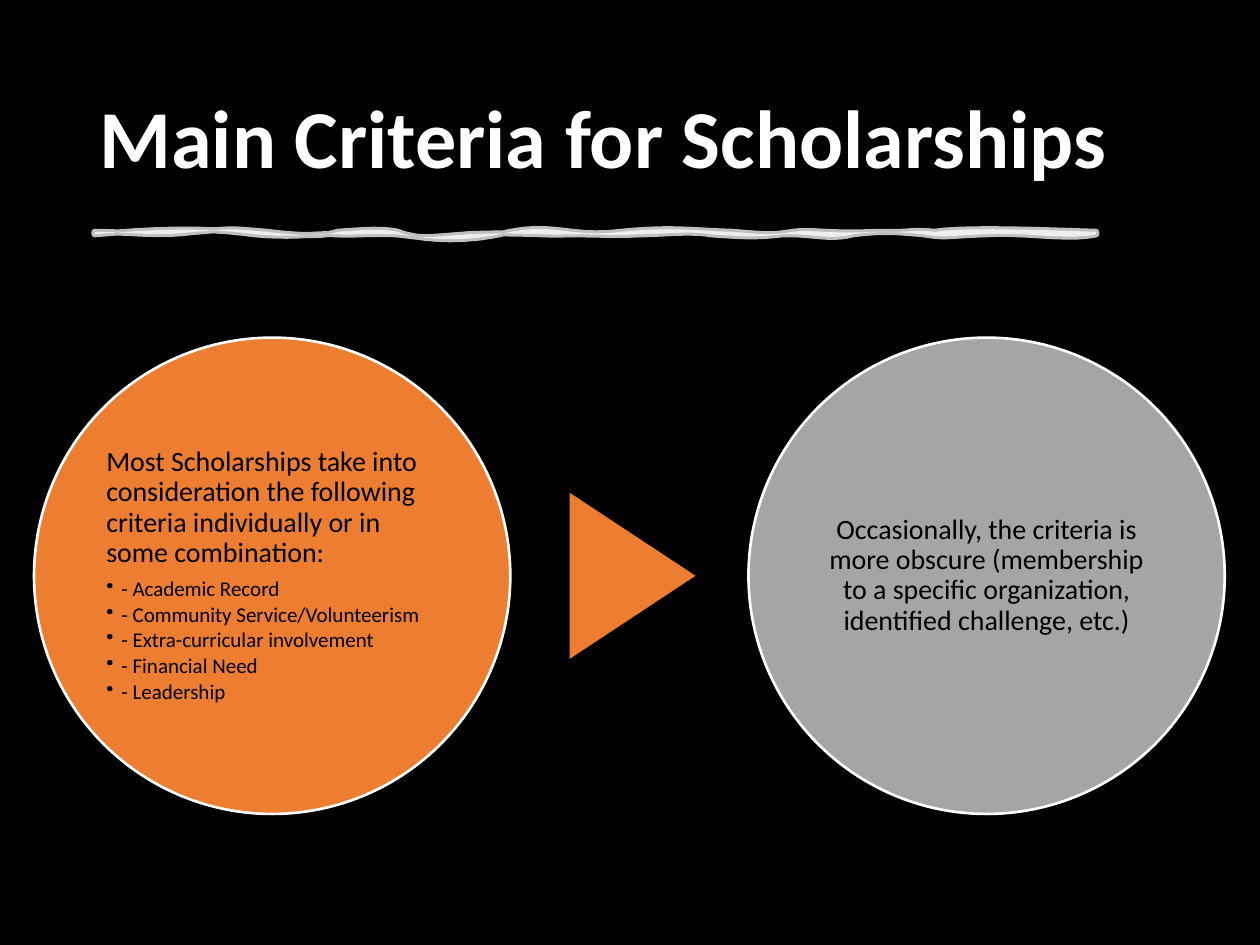
"""Build the slide on the main criteria for scholarships."""
from dataclasses import dataclass
from math import sqrt

from lxml.etree import SubElement
from pptx import Presentation
from pptx.dml.color import RGBColor
from pptx.enum.shapes import MSO_SHAPE as Shape
from pptx.enum.text import MSO_ANCHOR as Anchor, MSO_AUTO_SIZE as AutoSize, PP_ALIGN as Align
from pptx.oxml.ns import qn
from pptx.util import Inches, Pt

TITLE = "Main Criteria for Scholarships"
COMMON = "Most Scholarships take into consideration the following criteria individually or in some combination:"
CRITERIA = [
    "- Academic Record",
    "- Community Service/Volunteerism",
    "- Extra-curricular involvement",
    "- Financial Need",
    "- Leadership",
]
OBSCURE = (
    "Occasionally, the criteria is more obscure (membership to a specific "
    "organization, identified challenge, etc.)"
)


@dataclass(frozen=True)
class Theme:
    font: str = "Calibri"
    black: str = "000000"
    white: str = "FFFFFF"
    orange: str = "ED7D31"
    grey: str = "A5A5A5"
    title: int = 47
    body: int = 16
    bullet: int = 12
    leading: float = 0.9
    brush_line: float = 3.5
    brush_opacity: int = 75
    circle_line: float = 1.5


THEME = Theme()
WIDTH, HEIGHT = 10, 7.5
DIAMETER = 3.78
CIRCLE_TOP = 2.68
CIRCLE_LEFTS = (0.27, 5.94)
ARROW_SPAN, ARROW_DEPTH = 1.32, 1
ARROW_CENTRE = 5.02
BULLET_INDENT = 0.12

BRUSH_LEFT, BRUSH_TOP, BRUSH_BOTTOM = 0.75, 1.84, 1.86
UPPER_WAVES = [
    (1.01, 1.84, 1.24, 1.88, 1.55), (1.89, 1.81, 1.86, 1.82, 2.12),
    (2.35, 1.87, 2.57, 1.88, 2.68), (2.83, 1.83, 3.02, 1.81, 3.16),
    (3.23, 1.88, 3.63, 1.95, 4.05), (4.40, 1.77, 4.55, 1.89, 4.93),
    (5.34, 1.80, 5.46, 1.83, 5.81), (6.15, 1.87, 6.16, 1.86, 6.29),
    (6.45, 1.82, 6.61, 1.86, 6.94), (7.25, 1.85, 7.21, 1.82, 7.42),
    (7.66, 1.80, 8.36, 1.83, 8.70),
]
LOWER_WAVES = [
    (8.48, 1.91, 8.14, 1.84, 7.82), (7.50, 1.87, 7.53, 1.89, 7.33),
    (7.11, 1.84, 7.01, 1.83, 6.77), (6.58, 1.91, 6.43, 1.85, 6.21),
    (5.96, 1.89, 5.82, 1.87, 5.64), (5.50, 1.83, 5.24, 1.86, 5.08),
    (4.90, 1.87, 4.74, 1.86, 4.52), (4.30, 1.87, 4.14, 1.84, 3.71),
    (3.32, 1.89, 3.40, 1.89, 3.15), (2.89, 1.85, 2.80, 1.87, 2.67),
    (2.52, 1.85, 2.35, 1.89, 2.02), (1.66, 1.81, 1.33, 1.81, 0.75),
]


def trace(start, baseline, waves, steps=10):
    """Return points along cubic waves whose ends lie on a baseline."""
    points = [(start, baseline)]
    for x1, y1, x2, y2, end in waves:
        x0 = points[-1][0]
        for step in range(1, steps + 1):
            t = step / steps
            weights = ((1 - t) ** 3, 3 * t * (1 - t) ** 2, 3 * t * t * (1 - t), t ** 3)
            points.append(tuple(
                sum(w * v for w, v in zip(weights, values))
                for values in ((x0, x1, x2, end), (baseline, y1, y2, baseline))
            ))
    return points


def paint(shape, fill, line_width=None, opacity=100):
    """Give a shape a solid fill and an optional white outline."""
    shape.shadow.inherit = False
    shape.fill.solid()
    shape.fill.fore_color.rgb = RGBColor.from_string(fill)
    if line_width is None:
        shape.line.fill.background()
    else:
        shape.line.width = Pt(line_width)
        shape.line.color.rgb = RGBColor.from_string(THEME.white)
    if opacity < 100:
        for colour in shape.element.spPr.iter(qn("a:srgbClr")):
            SubElement(colour, qn("a:alpha"), val=str(opacity * 1000))


def style(paragraph, size, colour, align=Align.LEFT, after=0, bold=False):
    """Set the spacing, alignment and font of a paragraph."""
    paragraph.alignment = align
    paragraph.line_spacing = THEME.leading
    paragraph.space_before = Pt(0)
    paragraph.space_after = Pt(round(size * after, 1))
    for run in paragraph.runs:
        run.font.name = THEME.font
        run.font.size = Pt(size)
        run.font.bold = bold
        run.font.color.rgb = RGBColor.from_string(colour)


def add_bullet(paragraph):
    """Give a paragraph a hanging round bullet."""
    paragraph.level = 1
    properties = paragraph._p.get_or_add_pPr()
    properties.set("marL", str(Inches(BULLET_INDENT)))
    properties.set("indent", str(-Inches(BULLET_INDENT)))
    SubElement(properties, qn("a:buChar"), char="•")


def add_title(slide):
    """Fill and place the title."""
    title = slide.shapes.title
    title.left, title.top, title.width, title.height = map(Inches, (0.69, 0.4, 8.62, 1.45))
    frame = title.text_frame
    frame.text = TITLE
    frame.auto_size = AutoSize.NONE
    frame.vertical_anchor = Anchor.MIDDLE
    style(frame.paragraphs[0], THEME.title, THEME.white, bold=True)


def add_brush(slide):
    """Draw the brush stroke under the title."""
    upper = trace(BRUSH_LEFT, BRUSH_TOP, UPPER_WAVES)
    lower = trace(upper[-1][0], BRUSH_BOTTOM, LOWER_WAVES)
    start, *outline = [(Inches(x), Inches(y)) for x, y in upper + lower]
    builder = slide.shapes.build_freeform(*start)
    builder.add_line_segments(outline, close=True)
    paint(builder.convert_to_shape(), THEME.white, THEME.brush_line, THEME.brush_opacity)


def add_circle(slide, left, fill, lead, bullets, align):
    """Draw a circle with text in its inscribed square."""
    circle = slide.shapes.add_shape(
        Shape.OVAL, *map(Inches, (left, CIRCLE_TOP, DIAMETER, DIAMETER)))
    paint(circle, fill, THEME.circle_line)
    side = DIAMETER / sqrt(2)
    inset = (DIAMETER - side) / 2
    label = slide.shapes.add_textbox(
        *map(Inches, (left + inset, CIRCLE_TOP + inset, side, side)))
    frame = label.text_frame
    frame.word_wrap = True
    frame.vertical_anchor = Anchor.MIDDLE
    frame.margin_left = frame.margin_right = frame.margin_top = frame.margin_bottom = Inches(0.02)
    frame.text = "\n".join([lead, *bullets])
    first, *rest = frame.paragraphs
    style(first, THEME.body, THEME.black, align, after=0.35)
    for paragraph in rest:
        style(paragraph, THEME.bullet, THEME.black, align, after=0.15)
        add_bullet(paragraph)


def add_arrow(slide):
    """Draw the triangle pointing from the first circle to the second."""
    left = ARROW_CENTRE - ARROW_SPAN / 2
    top = CIRCLE_TOP + (DIAMETER - ARROW_DEPTH) / 2
    arrow = slide.shapes.add_shape(
        Shape.ISOSCELES_TRIANGLE, *map(Inches, (left, top, ARROW_SPAN, ARROW_DEPTH)))
    arrow.rotation = 90
    paint(arrow, THEME.orange)


def main():
    """Assemble and save the slide."""
    deck = Presentation()
    deck.slide_width, deck.slide_height = Inches(WIDTH), Inches(HEIGHT)
    slide = deck.slides.add_slide(deck.slide_layouts.get_by_name("Title Only"))
    slide.background.fill.solid()
    slide.background.fill.fore_color.rgb = RGBColor.from_string(THEME.black)
    add_title(slide)
    add_brush(slide)
    add_circle(slide, CIRCLE_LEFTS[0], THEME.orange, COMMON, CRITERIA, Align.LEFT)
    add_arrow(slide)
    add_circle(slide, CIRCLE_LEFTS[1], THEME.grey, OBSCURE, [], Align.CENTER)
    deck.save("out.pptx")


if __name__ == "__main__":
    main()
